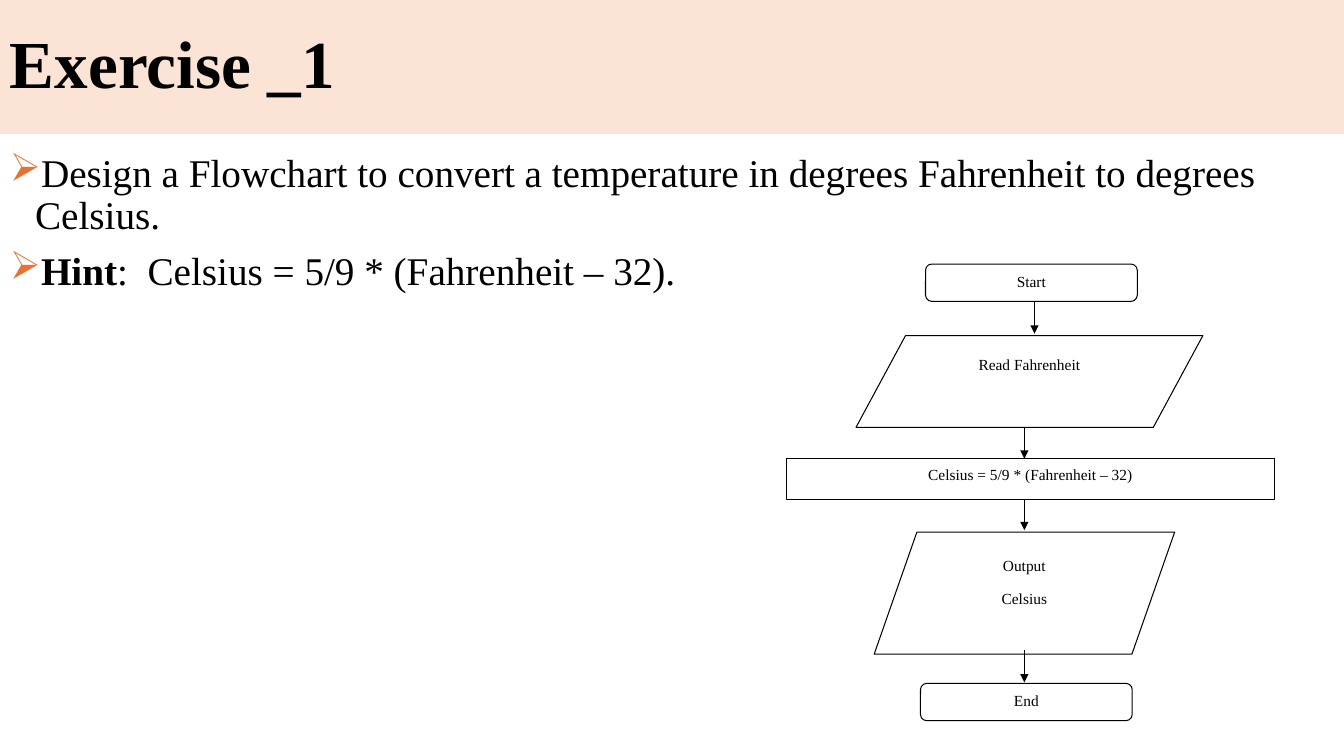
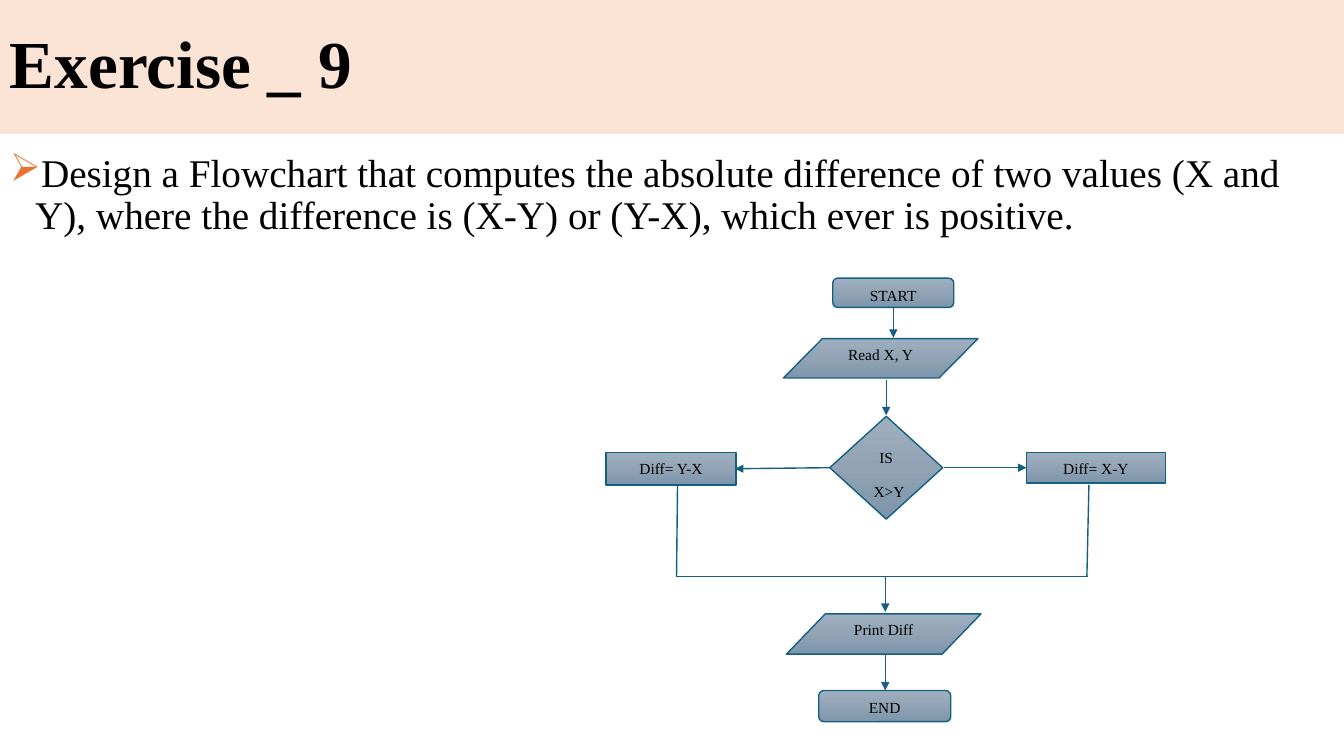
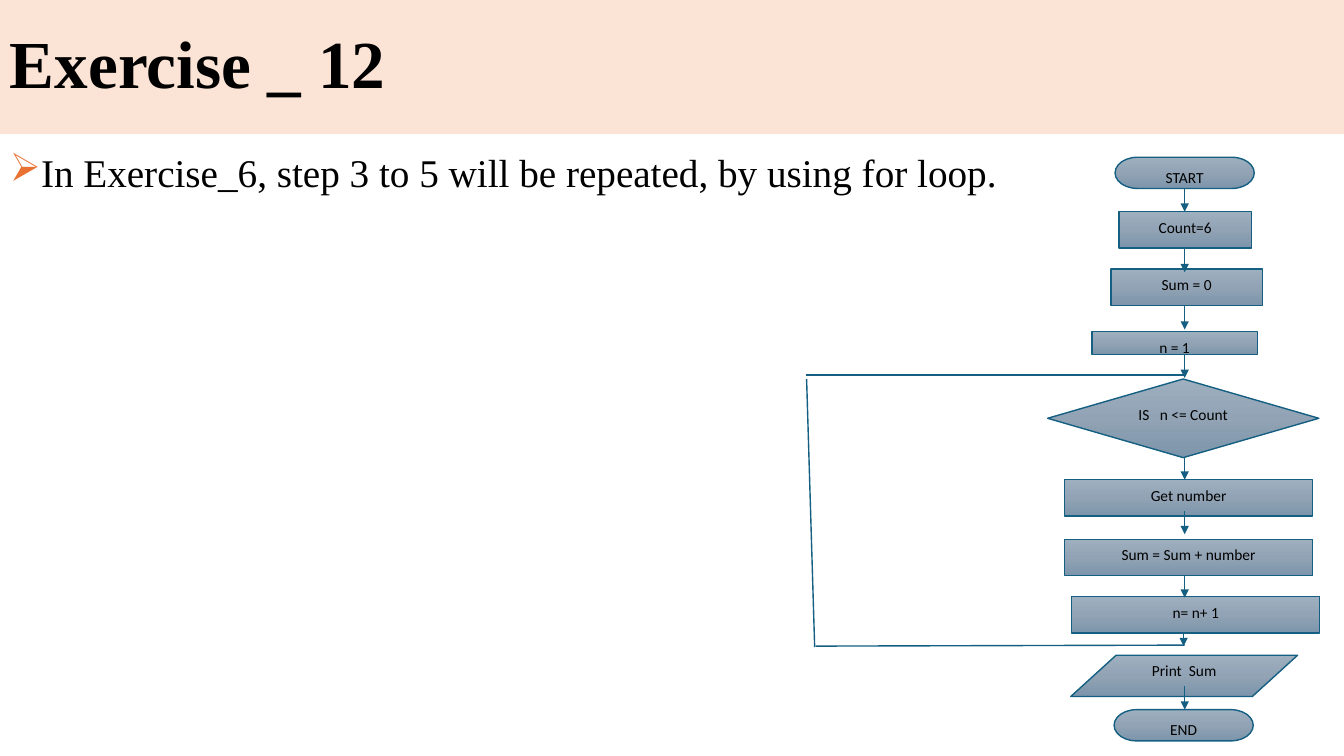
from copy import deepcopy
from dataclasses import dataclass

from lxml import etree
from pptx import Presentation
from pptx.dml.color import RGBColor
from pptx.enum.shapes import MSO_CONNECTOR, MSO_SHAPE
from pptx.enum.text import MSO_ANCHOR, PP_ALIGN
from pptx.oxml.ns import qn
from pptx.util import Inches, Pt

RECT = MSO_SHAPE.RECTANGLE
ROUND = MSO_SHAPE.ROUNDED_RECTANGLE
SLANT = MSO_SHAPE.PARALLELOGRAM
ALT = MSO_SHAPE.FLOWCHART_ALTERNATE_PROCESS
STEP = MSO_SHAPE.FLOWCHART_PROCESS
TEST = MSO_SHAPE.FLOWCHART_DECISION
DATA = MSO_SHAPE.FLOWCHART_DATA
TERM = MSO_SHAPE.FLOWCHART_TERMINATOR
STRAIGHT = MSO_CONNECTOR.STRAIGHT
TOP, MIDDLE = MSO_ANCHOR.TOP, MSO_ANCHOR.MIDDLE
LEFT, CENTER, RIGHT = PP_ALIGN.LEFT, PP_ALIGN.CENTER, PP_ALIGN.RIGHT


@dataclass(frozen=True)
class Theme:
    ink: str = "000000"
    paper: str = "FFFFFF"
    band: str = "FBE3D6"
    mark: str = "E97132"
    edge: str = "156082"
    steel: tuple = ("9EAFBF", "91A3B4", "7C95AB")
    serif: str = "Times New Roman"
    sans: str = "Calibri"
    head: int = 48
    body: int = 28
    label: int = 11


THEME = Theme()


def rgb(code):
    return RGBColor.from_string(code)


def write(frame, text, size=THEME.label, font=THEME.serif, bold=False, lead="",
          align=LEFT, before=0, after=0, pitch=1.0, bullet=None):
    """Add one paragraph; lead is a bold opening before the text."""
    para = frame.paragraphs[0]
    if para.runs:
        para = frame.add_paragraph()
    para.alignment = align
    para.line_spacing = pitch
    para.space_before, para.space_after = Pt(before), Pt(after)
    for words, heavy in ((lead, True), (text, bold)):
        if words:
            run = para.add_run()
            run.text = words
            run.font.size, run.font.name = Pt(size), font
            run.font.bold = heavy
            run.font.color.rgb = rgb(THEME.ink)
    if bullet:
        props = para._p.get_or_add_pPr()
        props.set("marL", str(Inches(0.25)))
        props.set("indent", str(-Inches(0.25)))
        tint = etree.SubElement(props, qn("a:buClr"))
        etree.SubElement(tint, qn("a:srgbClr"), val=THEME.mark)
        etree.SubElement(props, qn("a:buChar"), char=bullet)


class Deck:
    def __init__(self):
        self.prs = Presentation()
        self.prs.slide_width, self.prs.slide_height = Inches(13.33), Inches(7.5)

    def page(self, title, font=THEME.serif, steel=True):
        """Start a slide with its title band and flowchart style."""
        self.slide = self.prs.slides.add_slide(self.prs.slide_layouts[6])
        self.font, self.steel = font, steel
        self.edge = THEME.edge if steel else THEME.ink
        self.width = 1 if steel else 0.75
        band = self.shape(RECT, 0, 0, 13.33, 1.33)
        band.fill.solid()
        band.fill.fore_color.rgb = rgb(THEME.band)
        band.line.fill.background()
        band.text_frame.vertical_anchor = MIDDLE
        write(band.text_frame, title, size=THEME.head, bold=True, pitch=0.9)

    def body(self, *items):
        """Bulleted text; each item is (bold lead, text)."""
        box = self.slide.shapes.add_textbox(
            Inches(0), Inches(1.47), Inches(13.33), Inches(5.88))
        box.text_frame.word_wrap = True
        for lead, text in items:
            write(box.text_frame, text, lead=lead, size=THEME.body,
                  before=10, pitch=0.9, bullet="➢")

    def shape(self, kind, x, y, w, h):
        item = self.slide.shapes.add_shape(
            kind, Inches(x), Inches(y), Inches(w), Inches(h))
        item.shadow.inherit = False
        item.text_frame.word_wrap = True
        return item

    def shade(self, item):
        """Fill with the three-stop vertical steel gradient."""
        fill = item.fill
        fill.gradient()
        fill.gradient_angle = 270
        first = item._element.spPr.find(".//" + qn("a:gs"))
        first.addnext(deepcopy(first))
        for spot, (stop, code) in enumerate(zip(fill.gradient_stops, THEME.steel)):
            stop.position = spot / 2
            stop.color.rgb = rgb(code)

    def node(self, kind, x, y, w, h, *lines, adj=None, last=CENTER):
        """Flowchart symbol; last aligns its final line."""
        item = self.shape(kind, x, y, w, h)
        if adj:
            item.adjustments[0] = adj
        if self.steel:
            self.shade(item)
        else:
            item.fill.solid()
            item.fill.fore_color.rgb = rgb(THEME.paper)
        item.line.color.rgb = rgb(self.edge)
        item.line.width = Pt(self.width)
        item.text_frame.vertical_anchor = TOP
        for text in lines:
            write(item.text_frame, text, font=self.font, after=10, pitch=1.07,
                  align=last if text == lines[-1] else CENTER)

    def line(self, x1, y1, x2, y2, arrow=False):
        link = self.slide.shapes.add_connector(
            STRAIGHT, Inches(x1), Inches(y1), Inches(x2), Inches(y2))
        link.line.color.rgb = rgb(self.edge)
        link.line.width = Pt(self.width)
        if arrow:
            etree.SubElement(link.line._get_or_add_ln(), qn("a:tailEnd"),
                             type="triangle")
        etree.SubElement(link._element.spPr, qn("a:effectLst"))

    def drops(self, *spans):
        """Downward arrows; each span is (x, top, bottom)."""
        for x, top, end in spans:
            self.line(x, top, x, end, arrow=True)


def convert(deck):
    deck.page("Exercise _1", steel=False)
    deck.body(
        ("", "Design a Flowchart to convert a temperature in degrees "
             "Fahrenheit to degrees Celsius."),
        ("Hint", ":  Celsius = 5/9 * (Fahrenheit – 32)."))
    # Symbols
    deck.node(ROUND, 9.18, 2.62, 2.1, 0.37, "Start")
    deck.node(SLANT, 8.49, 3.33, 3.44, 0.91, "Read Fahrenheit", adj=0.54)
    deck.node(RECT, 7.8, 4.55, 4.84, 0.41, "Celsius = 5/9 * (Fahrenheit – 32)")
    deck.node(SLANT, 8.67, 5.28, 2.98, 1.21, "Output", "Celsius", adj=0.35)
    deck.node(ROUND, 9.13, 6.78, 2.1, 0.37, "End")
    # Flow
    deck.drops((10.26, 2.99, 3.31), (10.16, 4.24, 4.55),
               (10.16, 4.95, 5.26), (10.16, 6.45, 6.77))


def differ(deck):
    deck.page("Exercise _ 9")
    deck.body(
        ("", "Design a Flowchart that computes the absolute difference of two "
             "values (X and Y), where the difference is (X-Y) or (Y-X), which "
             "ever is positive."))
    # Symbols
    deck.node(ALT, 8.26, 2.76, 1.2, 0.29, "START")
    deck.node(DATA, 7.77, 3.36, 1.93, 0.39, "Read X, Y")
    deck.node(TEST, 8.23, 4.13, 1.12, 1.02, "IS", "X>Y", last=RIGHT)
    deck.node(STEP, 6.01, 4.49, 1.29, 0.32, "Diff= Y-X")
    deck.node(STEP, 10.18, 4.49, 1.38, 0.3, "Diff= X-Y")
    deck.node(DATA, 7.8, 6.09, 1.93, 0.4, "Print Diff")
    deck.node(ALT, 8.12, 6.85, 1.31, 0.31, "END")
    # Branches and their join
    deck.line(9.36, 4.64, 10.18, 4.64, arrow=True)
    deck.line(8.23, 4.64, 7.29, 4.65, arrow=True)
    deck.line(10.8, 4.81, 10.78, 5.72)
    deck.line(6.72, 4.81, 6.71, 5.72)
    deck.line(10.79, 5.72, 6.7, 5.72)
    # Flow
    deck.drops((8.86, 3.06, 3.35), (8.79, 3.77, 4.12),
               (8.78, 5.72, 6.07), (8.78, 6.5, 6.85))


def repeat(deck):
    deck.page("Exercise _ 12", font=THEME.sans)
    deck.body(("", "In Exercise_6, step 3 to 5 will be repeated, by using for loop."))
    # Loop path, behind the symbols
    deck.line(11.74, 3.72, 7.99, 3.72)
    deck.line(8, 3.76, 8.08, 6.42)
    deck.line(11.75, 6.4, 8.09, 6.41)
    deck.drops((11.74, 5.91, 6.41))
    # Symbols
    deck.node(TERM, 11.06, 1.56, 1.38, 0.31, "START")
    deck.node(STEP, 11.1, 2.1, 1.31, 0.36, "Count=6")
    deck.node(STEP, 11.02, 2.67, 1.5, 0.36, "Sum = 0")
    deck.node(STEP, 10.83, 3.29, 1.64, 0.23, "n = 1")
    deck.node(TEST, 10.39, 3.76, 2.69, 0.78, "IS   n <= Count")
    deck.node(STEP, 10.56, 4.76, 2.46, 0.36, "Get number")
    deck.node(STEP, 10.56, 5.35, 2.46, 0.36, "Sum = Sum + number")
    deck.node(STEP, 10.63, 5.92, 2.46, 0.36, "n= n+ 1")
    deck.node(DATA, 10.62, 6.5, 2.25, 0.41, "Print  Sum")
    deck.node(TERM, 11.05, 7.04, 1.38, 0.31, "END")
    # Flow: equal arrows down the column
    tops = (1.87, 2.47, 3.04, 3.52, 4.53, 5.07, 5.7, 6.81)
    deck.drops(*((11.75, top, top + 0.23) for top in tops))


def main():
    deck = Deck()
    for build in (convert, differ, repeat):
        build(deck)
    deck.prs.save("out.pptx")


if __name__ == "__main__":
    main()
